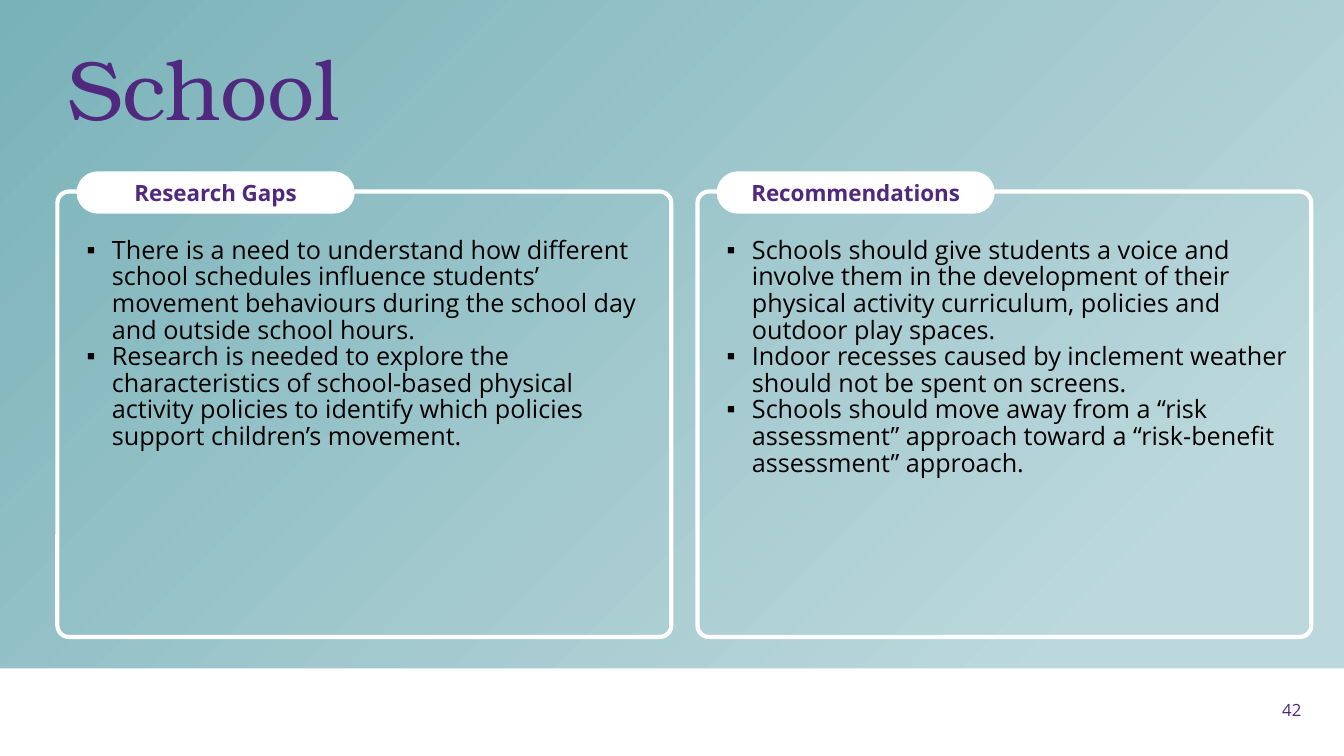
from lxml import etree
from pptx import Presentation
from pptx.dml.color import RGBColor
from pptx.enum.shapes import MSO_SHAPE
from pptx.enum.text import MSO_ANCHOR, MSO_AUTO_SIZE, PP_ALIGN
from pptx.oxml.ns import qn
from pptx.util import Pt

RECTANGLE = MSO_SHAPE.RECTANGLE
ROUNDED = MSO_SHAPE.ROUNDED_RECTANGLE
TOP, MIDDLE = MSO_ANCHOR.TOP, MSO_ANCHOR.MIDDLE
LEFT, CENTER, RIGHT = PP_ALIGN.LEFT, PP_ALIGN.CENTER, PP_ALIGN.RIGHT
NO_AUTOFIT = MSO_AUTO_SIZE.NONE

WHITE = RGBColor(0xFF, 0xFF, 0xFF)
BLACK = RGBColor(0, 0, 0)
PURPLE = RGBColor(0x50, 0x28, 0x7D)
PALE_TEAL = RGBColor(0xBC, 0xD8, 0xDC)
TEAL = RGBColor(0x79, 0xB2, 0xB9)

PANEL_LEFT = 41
PANEL_STEP = 457.2
PANELS = [
    ("Research Gaps", [
        "There is a need to understand how different school schedules influence "
        "students’ movement behaviours during the school day and outside school hours.",
        "Research is needed to explore the characteristics of school-based physical "
        "activity policies to identify which policies support children’s movement.",
    ]),
    ("Recommendations", [
        "Schools should give students a voice and involve them in the development of "
        "their physical activity curriculum, policies and outdoor play spaces.",
        "Indoor recesses caused by inclement weather should not be spent on screens.",
        "Schools should move away from a “risk assessment” approach toward a "
        "“risk-benefit assessment” approach.",
    ]),
]


class SlideBuilder:
    """Draws styled elements on one slide, with lengths in points."""

    body_font = "Open Sans"
    title_font = "TeX Gyre Bonum"

    def __init__(self, slide):
        self.slide = slide

    def set_text(self, shape, lines, size, color, align=LEFT, anchor=MIDDLE,
                 bold=False, font=None, spacing=None, bulleted=False):
        frame = shape.text_frame
        frame.word_wrap = True
        frame.auto_size = NO_AUTOFIT
        frame.vertical_anchor = anchor
        frame.text = "\n".join(lines)
        for paragraph in frame.paragraphs:
            paragraph.alignment = align
            paragraph.space_before = Pt(0)
            if spacing:
                paragraph.line_spacing = spacing
            if bulleted:
                properties = paragraph._p.get_or_add_pPr()
                properties.set("marL", str(Pt(18)))
                properties.set("indent", str(-Pt(18)))
                etree.SubElement(properties, qn("a:buChar")).set("char", "▪")
            for run in paragraph.runs:
                run.font.name = font or self.body_font
                run.font.size = Pt(size)
                run.font.bold = bold
                run.font.color.rgb = color

    def placeholder(self, index, left, top, width, height):
        shape = self.slide.placeholders[index]
        shape.left, shape.top = Pt(left), Pt(top)
        shape.width, shape.height = Pt(width), Pt(height)
        self.slide.shapes._spTree.append(shape._element)
        return shape

    def title(self, text, *box):
        self.set_text(self.placeholder(0, *box), [text], 60, PURPLE,
                      font=self.title_font, spacing=Pt(55))

    def bullets(self, index, lines, *box):
        self.set_text(self.placeholder(index, *box), lines, 18, BLACK,
                      anchor=TOP, spacing=0.88, bulleted=True)

    def shape(self, kind, left, top, width, height, fill=None, line=None, radius=None):
        shape = self.slide.shapes.add_shape(kind, Pt(left), Pt(top), Pt(width), Pt(height))
        shape.shadow.inherit = False
        if radius is not None:
            shape.adjustments[0] = radius
        if fill is None:
            shape.fill.background()
        else:
            shape.fill.solid()
            shape.fill.fore_color.rgb = fill
        if line is None:
            shape.line.fill.background()
        else:
            shape.line.color.rgb = line
            shape.line.width = Pt(3)
        return shape

    def gradient_backdrop(self, *box):
        backdrop = self.shape(RECTANGLE, *box)
        backdrop.fill.gradient()
        stops = zip(backdrop.fill.gradient_stops, [(0.14, PALE_TEAL), (1, TEAL)])
        for stop, (position, color) in stops:
            stop.position = position
            stop.color.rgb = color
        gradient = backdrop._element.spPr.find(qn("a:gradFill"))
        linear = gradient.find(qn("a:lin"))
        radial = etree.Element(qn("a:path"), {"path": "circle"})
        etree.SubElement(radial, qn("a:fillToRect"), {"l": "100000", "t": "100000"})
        gradient.replace(linear, radial)

    def pill(self, text, *box):
        pill = self.shape(ROUNDED, *box, fill=WHITE, radius=0.5)
        self.set_text(pill, [text], 16, PURPLE, align=CENTER, bold=True)

    def page_number(self, text, left, top, width, height):
        box = self.slide.shapes.add_textbox(Pt(left), Pt(top), Pt(width), Pt(height))
        self.set_text(box, [text], 12, PURPLE, align=RIGHT)


def main():
    presentation = Presentation()
    presentation.slide_width = Pt(960)
    presentation.slide_height = Pt(540)
    slide = presentation.slides.add_slide(presentation.slide_layouts[3])
    builder = SlideBuilder(slide)

    builder.gradient_backdrop(0, 0, 960, 477.4)
    builder.shape(RECTANGLE, 0, 477.4, 960, 62.6, fill=WHITE)
    builder.page_number("42", 902.9, 492.5, 33.8, 28.8)
    builder.title("School", PANEL_LEFT, 18.7, 828, 104.4)

    for number, (heading, lines) in enumerate(PANELS):
        left = PANEL_LEFT + number * PANEL_STEP
        builder.shape(ROUNDED, left, 136.8, 438.5, 318.2, line=WHITE, radius=0.026)
        builder.bullets(number + 1, lines, left + 13.7, 166.3, 421.9, 213.1)
        builder.pill(heading, left + 13.7, 122.4, 198.7, 30.2)

    presentation.save("out.pptx")


if __name__ == "__main__":
    main()
